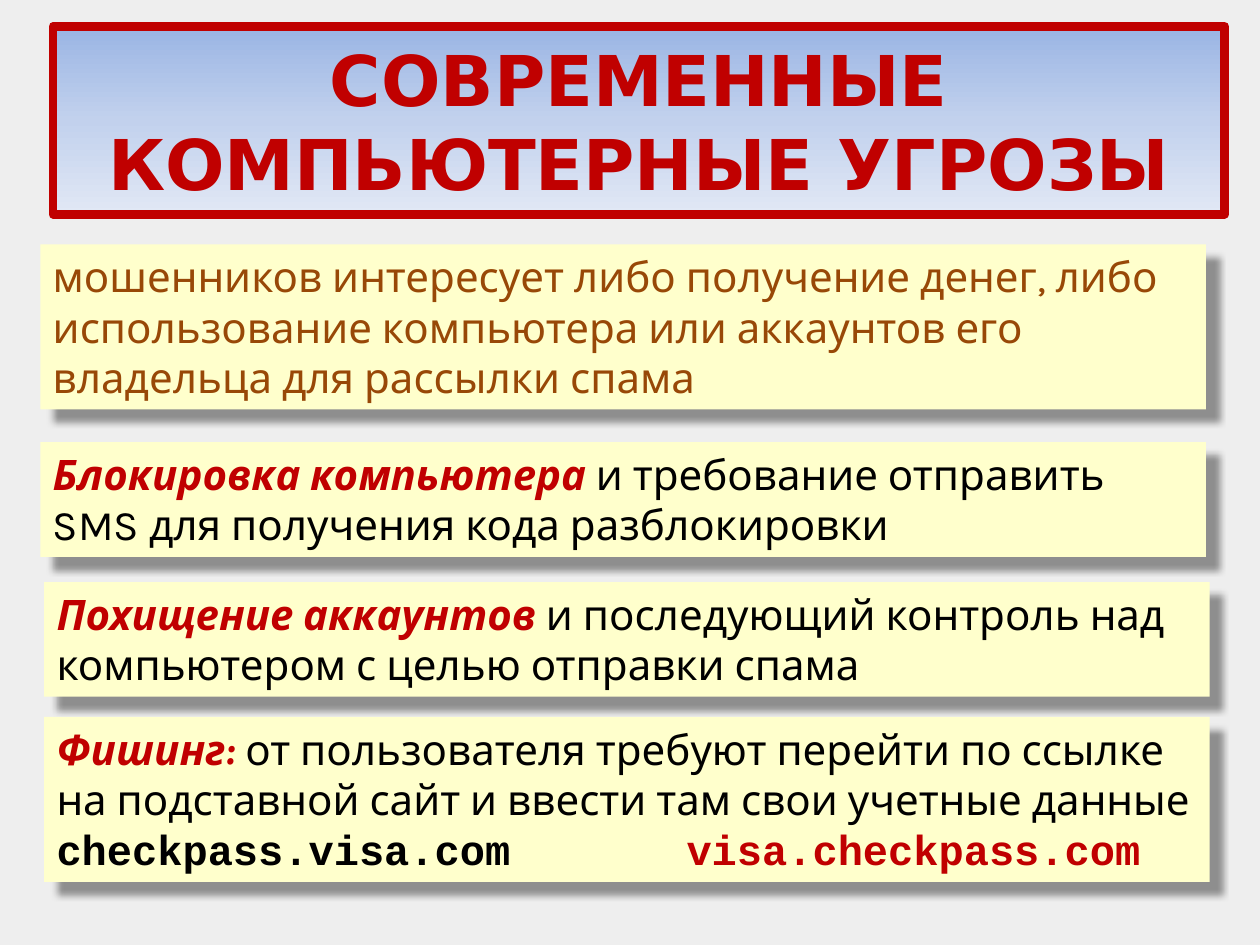
"""Build the slide on modern computer threats."""
from copy import deepcopy
from dataclasses import dataclass

from lxml import etree
from pptx import Presentation
from pptx.dml.color import RGBColor
from pptx.enum.text import MSO_ANCHOR, MSO_AUTO_SIZE, PP_ALIGN
from pptx.oxml.ns import qn
from pptx.util import Emu, Inches, Pt

CENTER = PP_ALIGN.CENTER
MIDDLE = MSO_ANCHOR.MIDDLE
FIT_SHAPE = MSO_AUTO_SIZE.SHAPE_TO_FIT_TEXT
FIT_NONE = MSO_AUTO_SIZE.NONE
TITLE_ONLY = 5
COLUMNS, ROWS = 100, 75


@dataclass(frozen=True)
class Theme:
    """Colours, fonts and type sizes of the slide."""
    background: str = "EEEEEE"
    gradient: tuple[str, ...] = ("9AB5E4", "C2D1ED", "E1E8F5")
    note: str = "FFFFCC"
    accent: str = "C00000"
    lead: str = "984807"
    ink: str = "000000"
    title_font: str = "DejaVu Sans"
    body_font: str = "Karla"
    code_font: str = "Courier New"
    title_size: int = 40
    body_size: int = 24
    border: int = 5


@dataclass(frozen=True)
class Area:
    """Place on the slide grid, in columns and rows."""
    column: float
    row: float
    columns: float
    rows: float


@dataclass(frozen=True)
class Note:
    """Threat note with a highlighted term, a text and sample addresses."""
    area: Area
    text: str
    term: str = ""
    color: str = Theme.ink
    addresses: tuple[str, ...] = ()


THEME = Theme()
TITLE = "СОВРЕМЕННЫЕ КОМПЬЮТЕРНЫЕ УГРОЗЫ"
TITLE_AREA = Area(4.2, 2.1, 93, 14.9)
ADDRESS_TAB = 5
NOTES = (
    Note(Area(3.2, 19.4, 92.5, 13.1),
         "мошенников интересует либо получение денег, либо использование "
         "компьютера или аккаунтов его владельца для рассылки спама",
         color=THEME.lead),
    Note(Area(3.2, 35.1, 92.5, 9.1),
         "и требование отправить SMS для получения кода разблокировки",
         "Блокировка компьютера "),
    Note(Area(3.5, 46.2, 92.5, 9.1),
         "и последующий контроль над компьютером с целью отправки спама",
         "Похищение аккаунтов "),
    Note(Area(3.5, 56.9, 92.5, 13.1),
         "от пользователя требуют перейти по ссылке на подставной сайт "
         "и ввести там свои учетные данные",
         "Фишинг: ", addresses=("checkpass.visa.com", "visa.checkpass.com")),
)


def frame(presentation, area: Area) -> tuple[Emu, Emu, Emu, Emu]:
    """Convert a grid area to left, top, width and height."""
    column = presentation.slide_width / COLUMNS
    row = presentation.slide_height / ROWS
    return (Emu(round(area.column * column)), Emu(round(area.row * row)),
            Emu(round(area.columns * column)), Emu(round(area.rows * row)))


def write_text(paragraph, text: str, *, color: str = THEME.ink,
               font: str = THEME.body_font, size: int = THEME.body_size,
               bold: bool = False, italic: bool = False) -> None:
    """Add a formatted run to a paragraph."""
    run = paragraph.add_run()
    run.text = text
    run.font.name, run.font.size = font, Pt(size)
    run.font.bold, run.font.italic = bold, italic
    run.font.color.rgb = RGBColor.from_string(color)


def fill_gradient(shape, colors: tuple[str, ...]) -> None:
    """Fill a shape from top to bottom with evenly spaced colours."""
    shape.fill.gradient()
    shape.fill.gradient_angle = 270
    stops = shape.element.spPr.find(f".//{qn('a:gsLst')}")
    for _ in colors[2:]:
        stops.append(deepcopy(stops[0]))
    for index, (stop, color) in enumerate(zip(shape.fill.gradient_stops, colors)):
        stop.position = index / (len(colors) - 1)
        stop.color.rgb = RGBColor.from_string(color)


def add_shadow(shape) -> None:
    """Cast a soft shadow to the lower right."""
    effects = etree.SubElement(shape.element.spPr, qn("a:effectLst"))
    shadow = etree.SubElement(effects, qn("a:outerShdw"), blurRad=str(Pt(4)),
                              dist=str(Pt(10)), dir="2700000", algn="tl", rotWithShape="0")
    color = etree.SubElement(shadow, qn("a:srgbClr"), val=THEME.ink)
    etree.SubElement(color, qn("a:alpha"), val="40000")


def add_tab(paragraph, position: float) -> None:
    """Set a left tab stop, in inches."""
    properties = paragraph._p.get_or_add_pPr()
    tabs = etree.SubElement(properties, qn("a:tabLst"))
    etree.SubElement(tabs, qn("a:tab"), pos=str(Inches(position)), algn="l")


def format_title(presentation, slide) -> None:
    """Place and format the title placeholder."""
    shape = slide.shapes.title
    shape.left, shape.top, shape.width, shape.height = frame(presentation, TITLE_AREA)
    fill_gradient(shape, THEME.gradient)
    shape.line.color.rgb = RGBColor.from_string(THEME.accent)
    shape.line.width = Pt(THEME.border)
    text_frame = shape.text_frame
    text_frame.word_wrap, text_frame.auto_size = True, FIT_NONE
    text_frame.vertical_anchor = MIDDLE
    paragraph = text_frame.paragraphs[0]
    paragraph.alignment = CENTER
    write_text(paragraph, TITLE, color=THEME.accent, font=THEME.title_font,
               size=THEME.title_size, bold=True)


def add_note(presentation, slide, note: Note) -> None:
    """Draw one threat note."""
    shape = slide.shapes.add_textbox(*frame(presentation, note.area))
    shape.fill.solid()
    shape.fill.fore_color.rgb = RGBColor.from_string(THEME.note)
    add_shadow(shape)
    text_frame = shape.text_frame
    text_frame.word_wrap, text_frame.auto_size = True, FIT_SHAPE
    paragraph = text_frame.paragraphs[0]
    if note.term:
        write_text(paragraph, note.term, color=THEME.accent, bold=True, italic=True)
    write_text(paragraph, note.text, color=note.color)
    if note.addresses:
        genuine, fake = note.addresses
        paragraph = text_frame.add_paragraph()
        add_tab(paragraph, ADDRESS_TAB)
        write_text(paragraph, f"{genuine}\t", font=THEME.code_font, bold=True)
        write_text(paragraph, fake, color=THEME.accent, font=THEME.code_font, bold=True)


def main() -> None:
    """Build and save the presentation."""
    presentation = Presentation()
    presentation.slide_width, presentation.slide_height = Inches(10), Inches(7.5)
    slide = presentation.slides.add_slide(presentation.slide_layouts[TITLE_ONLY])
    slide.background.fill.solid()
    slide.background.fill.fore_color.rgb = RGBColor.from_string(THEME.background)
    format_title(presentation, slide)
    for note in NOTES:
        add_note(presentation, slide, note)
    presentation.save("out.pptx")


if __name__ == "__main__":
    main()
